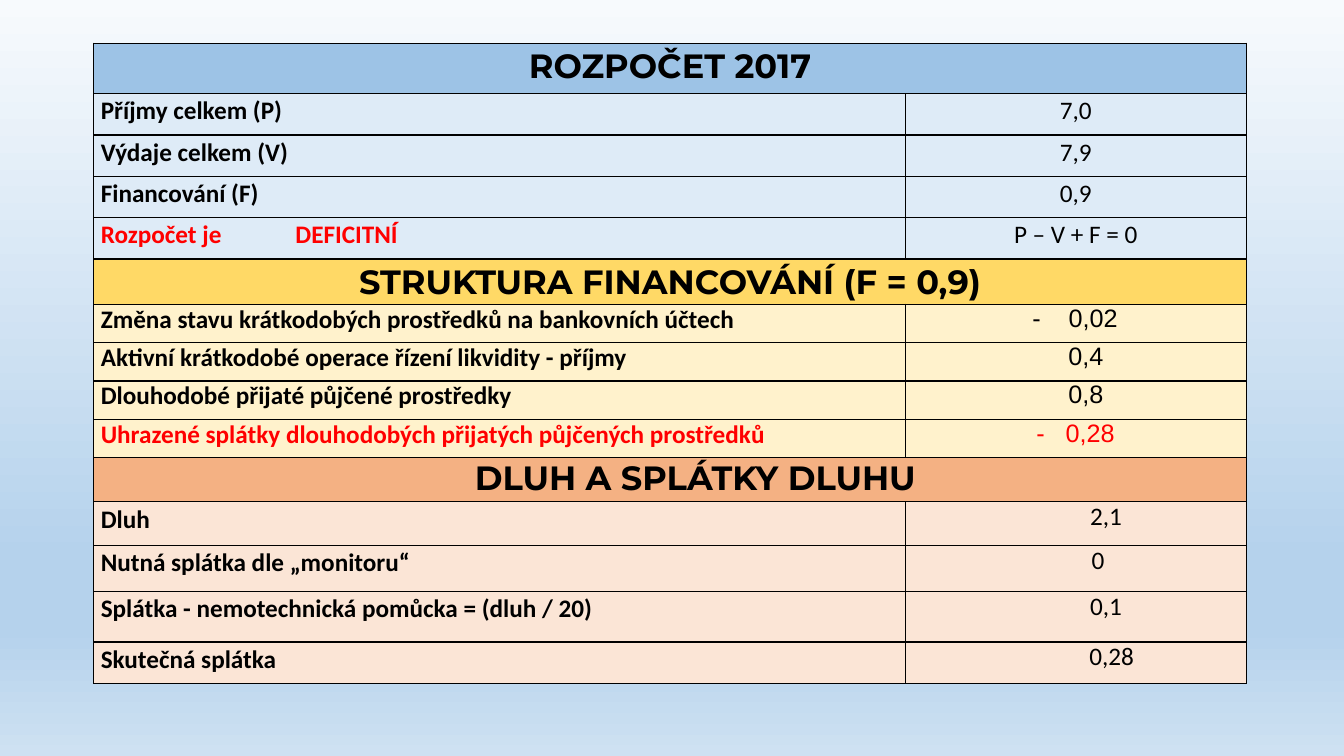
from pptx import Presentation
from pptx.dml.color import RGBColor as RGB
from pptx.enum.text import PP_ALIGN as AL
from pptx.oxml import parse_xml as xml
from pptx.oxml.ns import nsdecls as ns
from pptx.util import Inches, Pt

RED, BLACK = "FF0000", "000000"
BACK = [(0, "F7FAFD"), (74, "B5D2EC"), (83, "B5D2EC"), (100, "CEE1F2")]
BASE = {"size": Pt(18), "name": "Calibri", "bold": False}
LABEL = BASE | {"bold": True}
HEAD = {"size": Pt(24), "name": "Montserrat", "bold": True}
ARIAL = BASE | {"name": "Arial"}

# Each row: height, label, value, left indent, hanging indent, colour
PARTS = [
    {"head": ("ROZPOČET 2017", 0.5, 0, 1.07), "fills": ("9DC3E6", "DEEBF7"),
     "font": BASE, "lines": (1.07, 1.07),
     "rows": [(0.41, "Příjmy celkem (P)", "7,0", 0, 0, BLACK),
              (0.41, "Výdaje celkem (V)", "7,9", 0, 0, BLACK),
              (0.41, "Financování (F)", "0,9", 0, 0, BLACK),
              (0.41, "Rozpočet je\tDEFICITNÍ", "P – V + F = 0", 0, 0, BLACK)]},
    {"head": ("STRUKTURA FINANCOVÁNÍ (F = 0,9)", 0.45, 0, 1.07),
     "fills": ("FFD966", "FFF2CC"), "font": ARIAL, "lines": (1, 1),
     "rows": [(0.38, "Změna stavu krátkodobých prostředků na bankovních účtech",
               "-\t0,02", 1.55, 0.36, BLACK),
              (0.38, "Aktivní krátkodobé operace řízení likvidity - příjmy",
               "0,4", 0.2, 0, BLACK),
              (0.38, "Dlouhodobé přijaté půjčené prostředky",
               "0,8", 0.2, 0, BLACK),
              (0.38, "Uhrazené splátky dlouhodobých přijatých půjčených prostředků",
               "-\t0,28", 1.52, 0.29, RED)]},
    {"head": ("DLUH A SPLÁTKY DLUHU", 0.44, 0.5, 1), "fills": ("F4B183", "FBE5D6"),
     "font": BASE, "lines": (1.07, 1),
     "rows": [(0.43, "Dluh", "2,1", 0.6, 0, BLACK),
              (0.46, "Nutná splátka dle „monitoru“", "0", 0.44, 0, BLACK),
              (0.5, "Splátka - nemotechnická pomůcka = (dluh / 20)",
               "0,1", 0.6, 0, BLACK),
              (0.41, "Skutečná splátka", "0,28", 0.71, 0, BLACK)]},
]


def tint(hue):
    return RGB.from_string(hue)


def shade(slide):
    stops = "".join(f'<a:gs pos="{pos * 1000}"><a:srgbClr val="{hue}"/></a:gs>'
                    for pos, hue in BACK)
    slide.element.cSld.insert(0, xml(
        f'<p:bg {ns("p", "a")}><p:bgPr><a:gradFill><a:gsLst>{stops}</a:gsLst>'
        '<a:lin ang="5400000" scaled="0"/></a:gradFill><a:effectLst/>'
        '</p:bgPr></p:bg>'))


def frame(cell, fill):
    props = cell._tc.get_or_add_tcPr()
    for side in "LRTB":
        props.append(xml(
            f'<a:ln{side} {ns("a")} w="12700"><a:solidFill>'
            f'<a:srgbClr val="{BLACK}"/></a:solidFill></a:ln{side}>'))
    cell.fill.solid()
    cell.fill.fore_color.rgb = tint(fill)
    edges = {"margin_left": 0.07, "margin_right": 0.07,
             "margin_top": 0, "margin_bottom": 0}
    for key, size in edges.items():
        setattr(cell, key, Inches(size))


def write(cell, text, font, hue=BLACK, align=AL.LEFT, line=1, left=0, hang=0):
    para = cell.text_frame.paragraphs[0]
    para.alignment = align
    para.line_spacing = line
    props = para._p.get_or_add_pPr()
    props.set("marL", str(Inches(left)))
    props.set("indent", str(-Inches(hang)))
    run = para.add_run()
    run.text = text
    for key, value in font.items():
        setattr(run.font, key, value)
    run.font.color.rgb = tint(hue)


def title(table, top, part):
    text, high, left, line = part["head"]
    table.rows[top].height = Inches(high)
    cells = [table.cell(top, col) for col in range(2)]
    for cell in cells:
        frame(cell, part["fills"][0])
    cells[0].merge(cells[1])
    write(cells[0], text, HEAD, align=AL.CENTER, line=line, left=left)


def entry(table, top, part, row):
    high, label, value, left, hang, hue = row
    table.rows[top].height = Inches(high)
    name, sum_ = table.cell(top, 0), table.cell(top, 1)
    for cell in (name, sum_):
        frame(cell, part["fills"][1])
    first, last = part["lines"]
    tab = 1.93 if "\t" in label else 0
    write(name, label, LABEL, RED if tab else hue, line=first, left=tab, hang=tab)
    write(sum_, value, part["font"], hue, AL.LEFT if hang else AL.CENTER,
          last, left, hang)


def main():
    deck = Presentation()
    deck.slide_width, deck.slide_height = Inches(13.33), Inches(7.5)
    slide = deck.slides.add_slide(deck.slide_layouts[6])
    shade(slide)
    count = sum(1 + len(part["rows"]) for part in PARTS)
    table = slide.shapes.add_table(count, 2, Inches(0.93), Inches(0.43),
                                   Inches(11.43), Inches(6.32)).table
    table.first_row = table.horz_banding = False
    for col, wide in zip(table.columns, (8.05, 3.38)):
        col.width = Inches(wide)
    top = 0
    for part in PARTS:
        title(table, top, part)
        for step, row in enumerate(part["rows"], 1):
            entry(table, top + step, part, row)
        top += 1 + len(part["rows"])
    deck.save("out.pptx")


if __name__ == "__main__":
    main()
